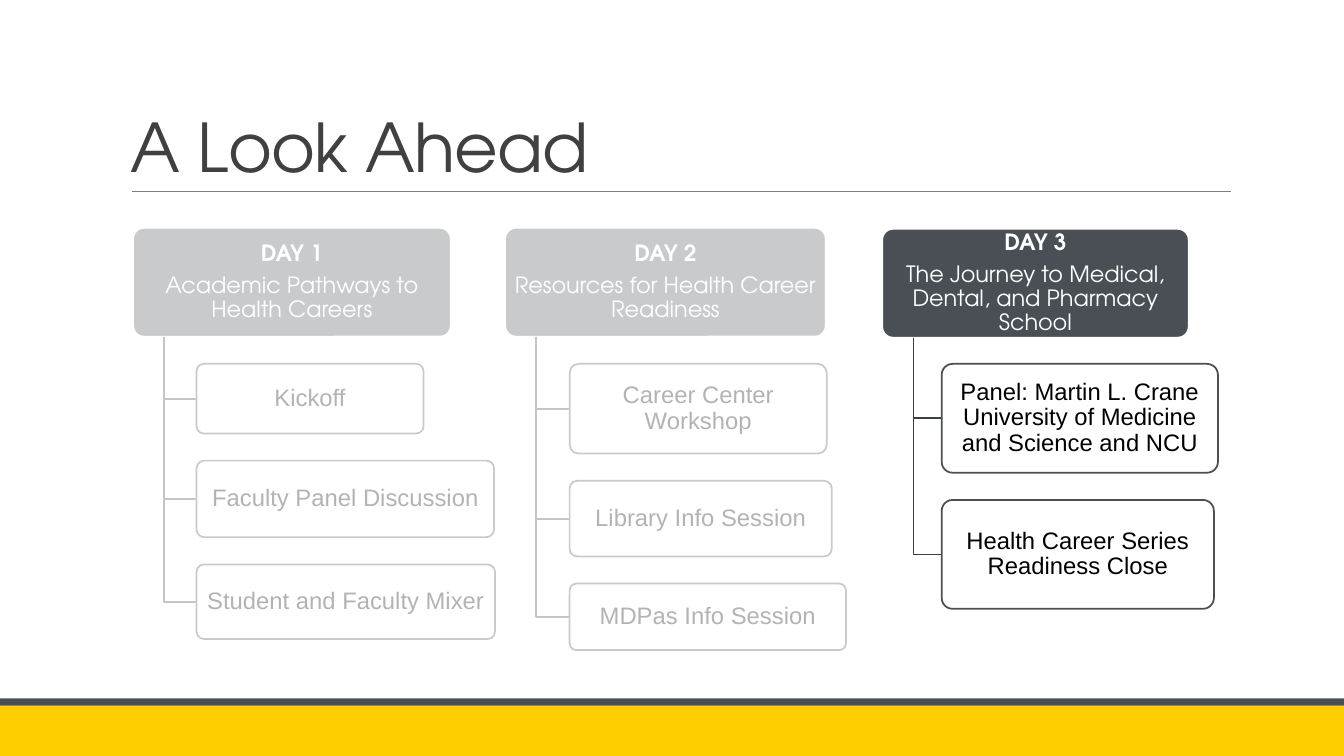
from lxml import etree
from pptx import Presentation
from pptx.dml.color import RGBColor
from pptx.enum.shapes import MSO_CONNECTOR, MSO_SHAPE
from pptx.enum.text import MSO_ANCHOR, PP_ALIGN
from pptx.oxml.ns import qn
from pptx.util import Inches, Pt

WHITE = RGBColor(0xFF, 0xFF, 0xFF)
BLACK = RGBColor(0x00, 0x00, 0x00)
YELLOW = RGBColor(0xFF, 0xCE, 0x00)
SLATE = RGBColor(0x4A, 0x4F, 0x55)
DARK_SLATE = RGBColor(0x3B, 0x3F, 0x44)
GRAY = RGBColor(0x80, 0x80, 0x80)
TITLE_GRAY = RGBColor(0x40, 0x40, 0x40)
HEADING_FONT = "TeX Gyre Adventor"
BODY_FONT = "Arial"

HEADER_HEIGHT = 1.08
BOX_GAP = 0.27
FIRST_BOX_TOP = 3.61
TRUNK_INDENT = 0.31

days = [
    ("DAY 1", "Academic Pathways to Health Careers", 1.32, 2.26, 3.15, 1.95, [
        ("Kickoff", 2.25, 0.69),
        ("Faculty Panel Discussion", 2.95, 0.76),
        ("Student and Faculty Mixer", 2.96, 0.74),
    ]),
    ("DAY 2", "Resources for Health Career Readiness", 5.01, 2.26, 3.18, 5.65, [
        ("Career Center Workshop", 2.55, 0.89),
        ("Library Info Session", 2.6, 0.75),
        ("MDPas Info Session", 2.74, 0.66),
    ]),
    ("DAY 3", "The Journey to Medical, Dental, and Pharmacy School", 8.75, 2.27, 3.04, 9.34, [
        ("Panel: Martin L. Crane University of Medicine and Science and NCU", 2.74, 1.08),
        ("Health Career Series Readiness Close", 2.7, 1.08),
    ]),
]

presentation = Presentation()
presentation.slide_width = Inches(13.33)
presentation.slide_height = Inches(7.5)
slide = presentation.slides.add_slide(presentation.slide_layouts[6])


def add_block(left, top, width, height, fill, kind=MSO_SHAPE.RECTANGLE, line=None):
    shape = slide.shapes.add_shape(
        kind, Inches(left), Inches(top), Inches(width), Inches(height))
    shape.shadow.inherit = False
    shape.fill.solid()
    shape.fill.fore_color.rgb = fill
    if line is None:
        shape.line.fill.background()
    else:
        shape.line.color.rgb = line
        shape.line.width = Pt(1.25)
    if kind == MSO_SHAPE.ROUNDED_RECTANGLE:
        shape.adjustments[0] = 0.1
    return shape


def write_text(shape, *lines, size, font, color, bold_first=False, spacing=0.9,
               align=PP_ALIGN.CENTER, anchor=MSO_ANCHOR.MIDDLE, inset=(0.06, 0.05)):
    frame = shape.text_frame
    frame.word_wrap = True
    frame.vertical_anchor = anchor
    frame.margin_left = frame.margin_right = Inches(inset[0])
    frame.margin_top = frame.margin_bottom = Inches(inset[1])
    for index, text in enumerate(lines):
        paragraph = frame.paragraphs[0] if index == 0 else frame.add_paragraph()
        paragraph.alignment = align
        paragraph.line_spacing = spacing
        if index < len(lines) - 1:
            paragraph.space_after = Pt(5.6)
        run = paragraph.add_run()
        run.text = text
        run.font.size = Pt(size)
        run.font.name = font
        run.font.color.rgb = color
        run.font.bold = bold_first and index == 0
    return frame


add_block(0, 7, 13.33, 0.5, YELLOW)
add_block(0, 6.93, 13.33, 0.07, SLATE)

title_rule = slide.shapes.add_connector(
    MSO_CONNECTOR.STRAIGHT, Inches(1.31), Inches(1.9), Inches(12.21), Inches(1.9))
title_rule.line.color.rgb = GRAY
title_rule.line.width = Pt(0.5)
etree.SubElement(title_rule._element.spPr, qn("a:effectLst"))

title = slide.shapes.add_textbox(Inches(1.2), Inches(0.31), Inches(11), Inches(1.59))
title_frame = write_text(
    title, "A Look Ahead", size=48, font=HEADING_FONT, color=TITLE_GRAY, spacing=0.85,
    align=PP_ALIGN.LEFT, anchor=MSO_ANCHOR.BOTTOM, inset=(0.1, 0.05))
title_frame.paragraphs[0].runs[0].font._element.set("spc", "-50")

for day, theme, left, top, width, box_left, sessions in days:
    header = add_block(left, top, width, HEADER_HEIGHT, SLATE,
                       MSO_SHAPE.ROUNDED_RECTANGLE, WHITE)
    write_text(header, day, theme, size=16, font=HEADING_FONT, color=WHITE, bold_first=True)

    trunk_left = left + TRUNK_INDENT
    trunk_top = top + HEADER_HEIGHT
    box_top = FIRST_BOX_TOP
    for session, box_width, box_height in sessions:
        middle = box_top + box_height / 2
        builder = slide.shapes.build_freeform(Inches(trunk_left), Inches(trunk_top))
        builder.add_line_segments(
            [(Inches(trunk_left), Inches(middle)), (Inches(box_left), Inches(middle))],
            close=False)
        branch = builder.convert_to_shape()
        branch.shadow.inherit = False
        branch.fill.background()
        branch.line.color.rgb = DARK_SLATE
        branch.line.width = Pt(1.25)

        box = add_block(box_left, box_top, box_width, box_height, WHITE,
                        MSO_SHAPE.ROUNDED_RECTANGLE, SLATE)
        write_text(box, session, size=17, font=BODY_FONT, color=BLACK)
        box_top += box_height + BOX_GAP

veil = add_block(0.93, 2.02, 7.63, 4.74, WHITE)
veil_color = veil._element.spPr.find(qn("a:solidFill")).find(qn("a:srgbClr"))
etree.SubElement(veil_color, qn("a:alpha")).set("val", "70000")

presentation.save("out.pptx")
